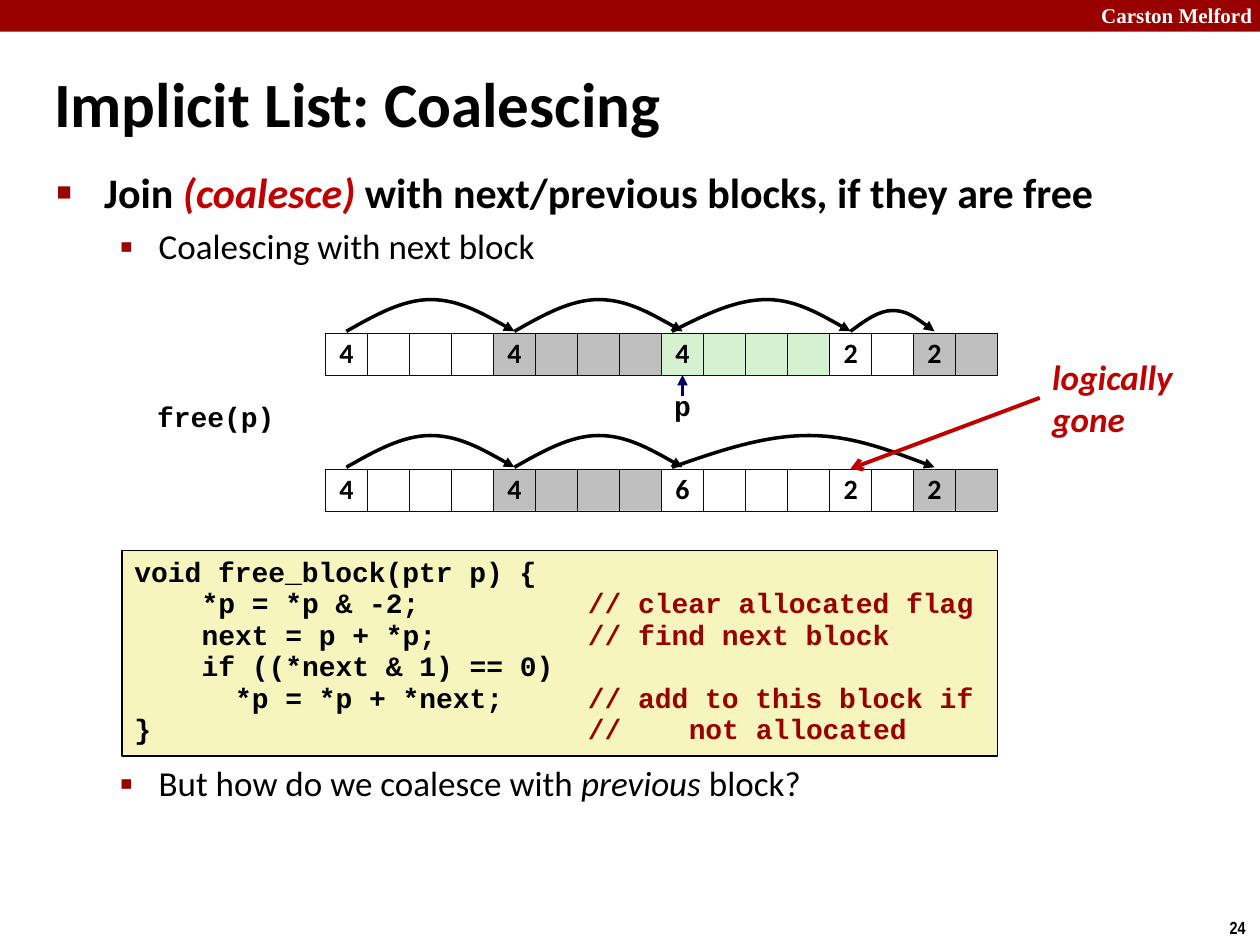
from dataclasses import dataclass, replace

from lxml import etree
from pptx import Presentation
from pptx.dml.color import RGBColor
from pptx.enum.shapes import MSO_CONNECTOR, MSO_SHAPE
from pptx.enum.text import MSO_ANCHOR, PP_ALIGN
from pptx.oxml.ns import qn
from pptx.util import Cm, Pt

RECTANGLE = MSO_SHAPE.RECTANGLE
STRAIGHT = MSO_CONNECTOR.STRAIGHT
MIDDLE, TOP = MSO_ANCHOR.MIDDLE, MSO_ANCHOR.TOP
CENTER = PP_ALIGN.CENTER
TOP_SITE, LEFT_SITE, BOTTOM_SITE = 0, 1, 2


@dataclass(frozen=True)
class TextStyle:
    font: str
    size: float
    color: str = "000000"
    bold: bool = True
    italic: bool = False


@dataclass(frozen=True)
class Theme:
    crimson: str = "990000"
    red: str = "C00000"
    navy: str = "000066"
    black: str = "000000"
    white: str = "FFFFFF"
    allocated: str = "BFBFBF"
    freeing: str = "D5F1CF"
    code_fill: str = "F6F5BD"
    header: TextStyle = TextStyle("Times New Roman", 12, "FFFFFF")
    number: TextStyle = TextStyle("Arial Narrow", 10)
    title: TextStyle = TextStyle("Calibri", 36)
    topic: TextStyle = TextStyle("Calibri", 24)
    point: TextStyle = TextStyle("Calibri", 20, bold=False)
    size: TextStyle = TextStyle("Calibri", 16)
    code: TextStyle = TextStyle("Courier New", 16)
    comment: TextStyle = TextStyle("Courier New", 16, "990000")
    note: TextStyle = TextStyle("Calibri", 20, "C00000", italic=True)


THEME = Theme()


@dataclass(frozen=True)
class Box:
    left: float
    top: float
    width: float
    height: float

    def lengths(self) -> tuple:
        return Cm(self.left), Cm(self.top), Cm(self.width), Cm(self.height)


@dataclass(frozen=True)
class Bullet:
    spans: tuple
    character: str
    percent: int
    margin: float
    hanging: float
    line_spacing: float
    space_before: float


@dataclass(frozen=True)
class Block:
    size: str
    cells: int
    fill: str


@dataclass(frozen=True)
class Arc:
    start: float
    end: float
    lead: float = 0
    height: float = 0.64


ROW_LEFT, ROW_CELLS = 6.56, 16
CELL = 13.55 / ROW_CELLS
CODE_CHARACTER = Pt(THEME.code.size * 0.6)

FIRST_BLOCKS = (Block("4", 4, THEME.white), Block("4", 4, THEME.allocated))
LAST_BLOCKS = (Block("2", 2, THEME.white), Block("2", 2, THEME.allocated))
FIRST_ARCS = (Arc(0, 4), Arc(4, 8))
BEFORE = (*FIRST_BLOCKS, Block("4", 4, THEME.freeing), *LAST_BLOCKS)
AFTER = (*FIRST_BLOCKS, Block("6", 4, THEME.white), *LAST_BLOCKS)
BEFORE_ARCS = (*FIRST_ARCS, Arc(8, 12, 0.25), Arc(12, 14, height=0.42))
AFTER_ARCS = (*FIRST_ARCS, Arc(8, 14, 0.25))

BULLETS = (
    Bullet((("Join ", THEME.topic),
            ("(coalesce) ", replace(THEME.topic, color=THEME.red, italic=True)),
            ("with next/previous blocks, if they are free", THEME.topic)),
           "■", 60, 0.96, 0.96, 0.83, 17.5),
    Bullet((("Coalescing with next block", THEME.point),), "▪", 110, 2.06, 0.79, 0.88, 7.5),
    Bullet((("But how do we coalesce with ", THEME.point),
            ("previous", replace(THEME.point, italic=True)),
            (" block?", THEME.point)), "▪", 110, 2.06, 0.79, 0.88, 286),
)

CODE_LINES = (
    ((0, "void free_block(ptr p) {"),),
    ((4, "*p = *p & -2;"), (27, "// clear allocated flag")),
    ((4, "next = p + *p;"), (27, "// find next block")),
    ((4, "if ((*next & 1) == 0)"),),
    ((6, "*p = *p + *next;"), (27, "// add to this block if")),
    ((0, "}"), (27, "//"), (33, "not allocated")),
)


def apply_style(run, style: TextStyle) -> None:
    font = run.font
    font.name, font.size = style.font, Pt(style.size)
    font.bold, font.italic = style.bold, style.italic
    font.color.rgb = RGBColor.from_string(style.color)


def add_span(paragraph, text: str, style: TextStyle) -> None:
    run = paragraph.add_run()
    run.text = text
    apply_style(run, style)


def add_text(slide, box: Box, text: str, style: TextStyle, spacing: float = 1, anchor=TOP):
    shape = slide.shapes.add_textbox(*box.lengths())
    frame = shape.text_frame
    frame.text = text
    frame.word_wrap, frame.vertical_anchor = False, anchor
    for paragraph in frame.paragraphs:
        paragraph.line_spacing = spacing
        for run in paragraph.runs:
            apply_style(run, style)
    return shape


def add_rectangle(slide, box: Box, fill: str, line: str = "", width: float = 0.25):
    shape = slide.shapes.add_shape(RECTANGLE, *box.lengths())
    shape.shadow.inherit = False
    shape.fill.solid()
    shape.fill.fore_color.rgb = RGBColor.from_string(fill)
    if line:
        set_line(shape, line, width)
    else:
        shape.line.fill.background()
    return shape


def set_line(shape, color: str, width: float, arrowhead: str = "") -> None:
    shape.line.color.rgb = RGBColor.from_string(color)
    shape.line.width = Pt(width)
    if arrowhead:
        etree.SubElement(shape.line._get_or_add_ln(), qn("a:tailEnd"), type=arrowhead)


def add_arrow(slide, start: tuple, color: str, width: float, arrowhead: str, target, site: int):
    connector = slide.shapes.add_connector(STRAIGHT, *start, *start)
    connector.end_connect(target, site)
    set_line(connector, color, width, arrowhead)
    etree.SubElement(connector._element.spPr, qn("a:effectLst"))
    return connector


def add_row(slide, top: float, blocks: tuple) -> list:
    cells = []
    for block in blocks:
        for index in range(block.cells):
            box = Box(ROW_LEFT + len(cells) * CELL, top, CELL, CELL)
            cell = add_rectangle(slide, box, block.fill, THEME.navy)
            cells.append(cell)
            if index == 0:
                frame = cell.text_frame
                frame.text = block.size
                frame.word_wrap, frame.vertical_anchor = False, MIDDLE
                paragraph = frame.paragraphs[0]
                paragraph.alignment, paragraph.line_spacing = CENTER, 0.98
                apply_style(paragraph.runs[0], THEME.size)
    return cells


def add_arc(slide, row_top: float, arc: Arc) -> None:
    start, end = (ROW_LEFT + (cell + 0.5) * CELL for cell in (arc.start, arc.end))
    apex, base = (start + end) / 2, row_top - 0.03
    start -= arc.lead * CELL
    rise, fall = (apex - start) / 3, (end - apex) / 3
    points = [(start + rise, 0.5), (start + 2 * rise, 1), (apex, 1),
              (apex + fall, 1), (apex + 2 * fall, 0.5), (end, 0)]
    builder = slide.shapes.build_freeform(Cm(start), Cm(base))
    builder.add_line_segments([(Cm(x), Cm(base - lift * arc.height)) for x, lift in points], close=False)
    shape = builder.convert_to_shape()
    shape.shadow.inherit = False
    shape.fill.background()
    set_line(shape, THEME.black, 2, "triangle")
    path = next(shape._element.iter(qn("a:path")))
    segments = path.findall(qn("a:lnTo"))
    for first in range(0, len(segments), 3):
        curve = etree.SubElement(path, qn("a:cubicBezTo"))
        for segment in segments[first:first + 3]:
            curve.append(segment[0])
            path.remove(segment)


def add_bullets(slide, box: Box) -> None:
    frame = slide.shapes.add_textbox(*box.lengths()).text_frame
    frame.word_wrap = True
    for index, bullet in enumerate(BULLETS):
        paragraph = frame.add_paragraph() if index else frame.paragraphs[0]
        paragraph.line_spacing = bullet.line_spacing
        paragraph.space_before = Pt(bullet.space_before)
        for text, style in bullet.spans:
            add_span(paragraph, text, style)
        properties = paragraph._p.get_or_add_pPr()
        properties.set("marL", str(Cm(bullet.margin)))
        properties.set("indent", str(-Cm(bullet.hanging)))
        color = etree.SubElement(properties, qn("a:buClr"))
        etree.SubElement(color, qn("a:srgbClr"), val=THEME.crimson)
        etree.SubElement(properties, qn("a:buSzPct"), val=str(bullet.percent * 1000))
        etree.SubElement(properties, qn("a:buFont"), typeface="Arial")
        etree.SubElement(properties, qn("a:buChar"), char=bullet.character)


def add_code(slide, box: Box) -> None:
    frame = add_rectangle(slide, box, THEME.code_fill, THEME.black, 1).text_frame
    frame.word_wrap, frame.vertical_anchor = True, TOP
    for index, pieces in enumerate(CODE_LINES):
        paragraph = frame.add_paragraph() if index else frame.paragraphs[0]
        paragraph.alignment, paragraph.line_spacing = PP_ALIGN.LEFT, 0.94
        stops = etree.SubElement(paragraph._p.get_or_add_pPr(), qn("a:tabLst"))
        for column, text in pieces:
            if column:
                etree.SubElement(stops, qn("a:tab"), pos=str(column * CODE_CHARACTER), algn="l")
            style = THEME.comment if column >= 27 else THEME.code
            add_span(paragraph, "\t" + text if column else text, style)


def main() -> None:
    """Build the slide on coalescing free blocks in an implicit list."""
    presentation = Presentation()
    presentation.slide_width, presentation.slide_height = Cm(25.4), Cm(19.05)
    slide = presentation.slides.add_slide(presentation.slide_layouts[6])
    add_rectangle(slide, Box(0, 0, 25.4, 0.64), THEME.crimson)
    add_text(slide, Box(21.95, -0.08, 3.63, 0.76), "Carston Melford", THEME.header)
    add_text(slide, Box(24.54, 18.36, 0.86, 0.69), "24", THEME.number)
    add_text(slide, Box(0.84, 1.27, 18.8, 1.6), "Implicit List: Coalescing", THEME.title, anchor=MIDDLE)
    add_bullets(slide, Box(0.89, 3.4, 23.09, 15.24))
    add_code(slide, Box(2.46, 11.1, 17.65, 4.14))

    rows = []
    for top, blocks, arcs in ((6.71, BEFORE, BEFORE_ARCS), (9.45, AFTER, AFTER_ARCS)):
        rows.append(add_row(slide, top, blocks))
        for arc in arcs:
            add_arc(slide, top, arc)
    before_cells, after_cells = rows

    add_text(slide, Box(2.92, 7.98, 2.9, 0.91), "free(p)", THEME.code, 0.94)
    add_text(slide, Box(13.34, 7.77, 0.84, 0.91), "p", THEME.code, 0.94)
    pointer_start = (Cm(ROW_LEFT + 8.5 * CELL), Cm(7.98))
    add_arrow(slide, pointer_start, THEME.navy, 2, "triangle", before_cells[8], BOTTOM_SITE)
    note = add_text(slide, Box(20.96, 7.04, 2.95, 1.96), "logically\ngone", THEME.note)
    note_arrow = add_arrow(slide, (note.left, note.top), THEME.red, 2.25, "arrow", after_cells[12], TOP_SITE)
    note_arrow.begin_connect(note, LEFT_SITE)
    presentation.save("out.pptx")


if __name__ == "__main__":
    main()
